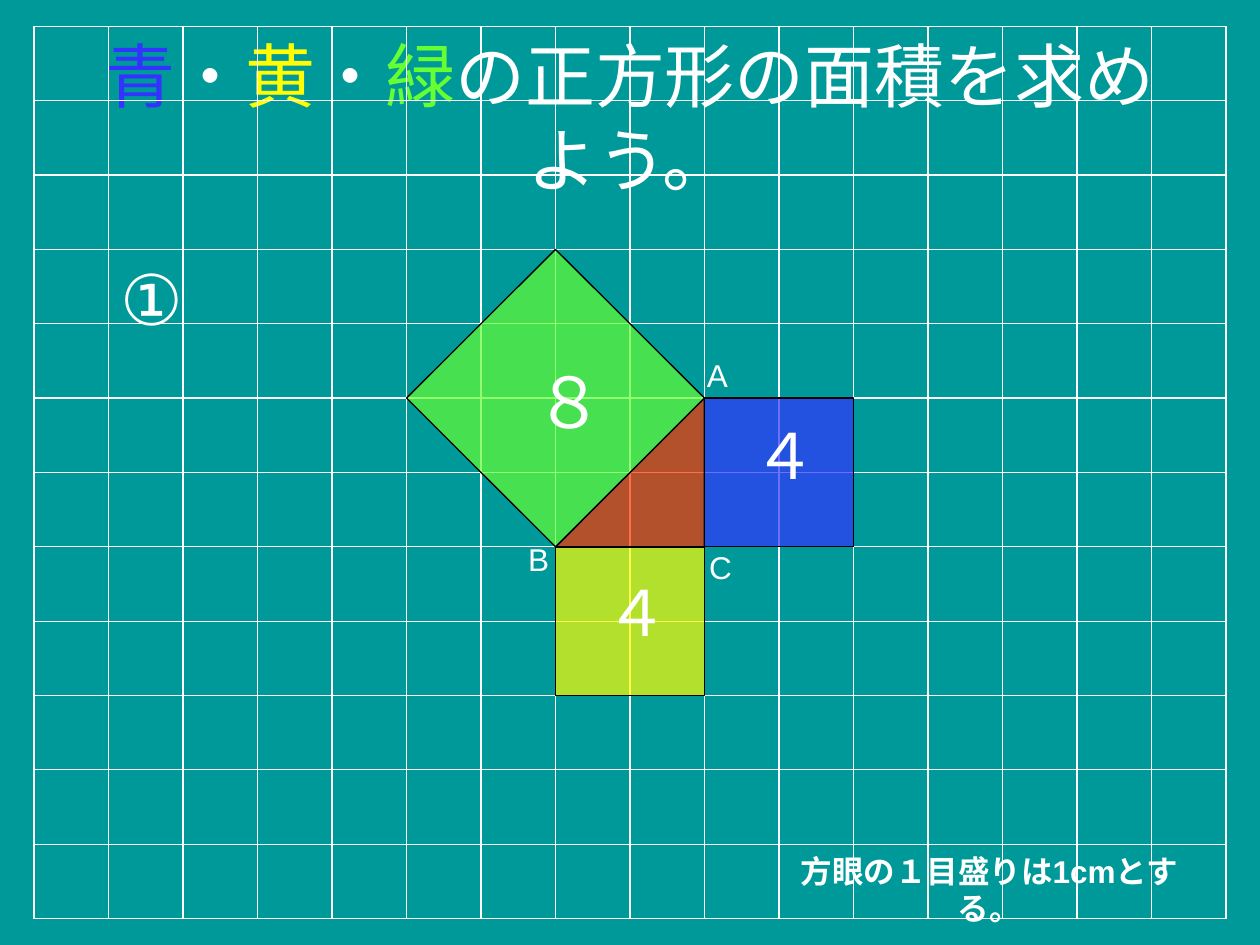
from lxml.etree import SubElement
from pptx import Presentation
from pptx.dml.color import RGBColor
from pptx.enum.shapes import MSO_CONNECTOR as CONN, MSO_SHAPE as SHAPE
from pptx.enum.text import MSO_ANCHOR as ANCHOR, MSO_AUTO_SIZE as FIT, PP_ALIGN as ALIGN
from pptx.oxml.ns import qn
from pptx.util import Inches, Pt

LEFT, TOP, COLS, ROWS = 0.27, 0.21, 16, 12
RIGHT, BOTTOM = 9.73, 7.29
BLUE, YELLOW, GREEN, RED = "3333FF", "FFFF00", "66FF33", "FF3300"
WHITE, BLACK, TEAL = "FFFFFF", "000000", "009999"


def rgb(value):
    return RGBColor.from_string(value)


def grid_x(col):
    return LEFT + (RIGHT - LEFT) * col / COLS


def grid_y(row):
    return TOP + (BOTTOM - TOP) * row / ROWS


class Board:
    font = "Arial"
    ink = WHITE
    line_width = Pt(0.75)

    def __init__(self, prs):
        self.s = prs.slides.add_slide(prs.slide_layouts[5])
        self.s.background.fill.solid()
        self.s.background.fill.fore_color.rgb = rgb(TEAL)

    def style(self, p, size, bold=False):
        p.alignment = ALIGN.CENTER
        p.font.name = self.font
        p.font.size = Pt(size)
        p.font.bold = bold

    def title(self, parts, x, y, w, h):
        sp = self.s.shapes.title
        sp.left, sp.top, sp.width, sp.height = map(Inches, (x, y, w, h))
        tf = sp.text_frame
        tf.auto_size = FIT.NONE
        tf.vertical_anchor = ANCHOR.MIDDLE
        p = tf.paragraphs[0]
        self.style(p, 40)
        for text, color in parts:
            r = p.add_run()
            r.text = text
            r.font.color.rgb = rgb(color)
            SubElement(r.font._element, qn("a:ea")).set("typeface", self.font)

    def line(self, x1, y1, x2, y2):
        c = self.s.shapes.add_connector(CONN.STRAIGHT, *map(Inches, (x1, y1, x2, y2)))
        c.line.color.rgb = rgb(self.ink)
        c.line.width = self.line_width
        SubElement(c._element.spPr, qn("a:effectLst"))

    def grid(self):
        for row in range(ROWS + 1):
            self.line(LEFT, grid_y(row), RIGHT, grid_y(row))
        for col in range(COLS + 1):
            self.line(grid_x(col), TOP, grid_x(col), BOTTOM)

    def shape(self, kind, col, row, cells, color, rotation=0):
        x, y = grid_x(col), grid_y(row)
        w, h = grid_x(col + cells) - x, grid_y(row + cells) - y
        sp = self.s.shapes.add_shape(kind, *map(Inches, (x, y, w, h)))
        sp.rotation = rotation
        sp.shadow.inherit = False
        sp.fill.solid()
        sp.fill.fore_color.rgb = rgb(color)
        clr = sp._element.spPr.find(qn("a:solidFill"))[0]
        SubElement(clr, qn("a:alpha")).set("val", "70000")
        sp.line.color.rgb = rgb(BLACK)
        sp.line.width = self.line_width

    def text(self, text, x, y, w, h, size, bold=False, wrap=False):
        tf = self.s.shapes.add_textbox(*map(Inches, (x, y, w, h))).text_frame
        tf.word_wrap = wrap
        tf.auto_size = FIT.SHAPE_TO_FIT_TEXT
        p = tf.paragraphs[0]
        p.text = text
        self.style(p, size, bold)
        p.font.color.rgb = rgb(self.ink)


def main():
    prs = Presentation()
    prs.slide_width, prs.slide_height = Inches(10), Inches(7.5)
    board = Board(prs)
    board.title([("青", BLUE), ("・", WHITE), ("黄", YELLOW), ("・", WHITE),
                 ("緑", GREEN), ("の正方形の面積を求めよう。", WHITE)],
                0.5, 0.3, 9, 1.25)
    board.grid()
    board.text("方眼の１目盛りは1cmとする。", 6.16, 6.71, 3.38, 0.4, 18, bold=True, wrap=True)

    board.shape(SHAPE.RIGHT_TRIANGLE, 7, 5, 2, RED, rotation=270)
    board.shape(SHAPE.RECTANGLE, 7, 7, 2, YELLOW)
    board.shape(SHAPE.RECTANGLE, 9, 5, 2, BLUE)
    board.shape(SHAPE.DIAMOND, 5, 3, 4, GREEN)

    for name, x, y in [("A", 5.51, 2.78), ("B", 4.09, 4.24), ("C", 5.53, 4.3)]:
        board.text(name, x, y, 0.37, 0.4, 18)
    board.text("①", 0.83, 1.98, 0.76, 0.77, 40)
    for x, y in [(4.71, 4.5), (5.88, 3.26)]:
        board.text("４", x, y, 0.54, 0.7, 36)
    board.text("８", 4.14, 2.8, 0.58, 0.77, 40)
    prs.save("out.pptx")


if __name__ == "__main__":
    main()
